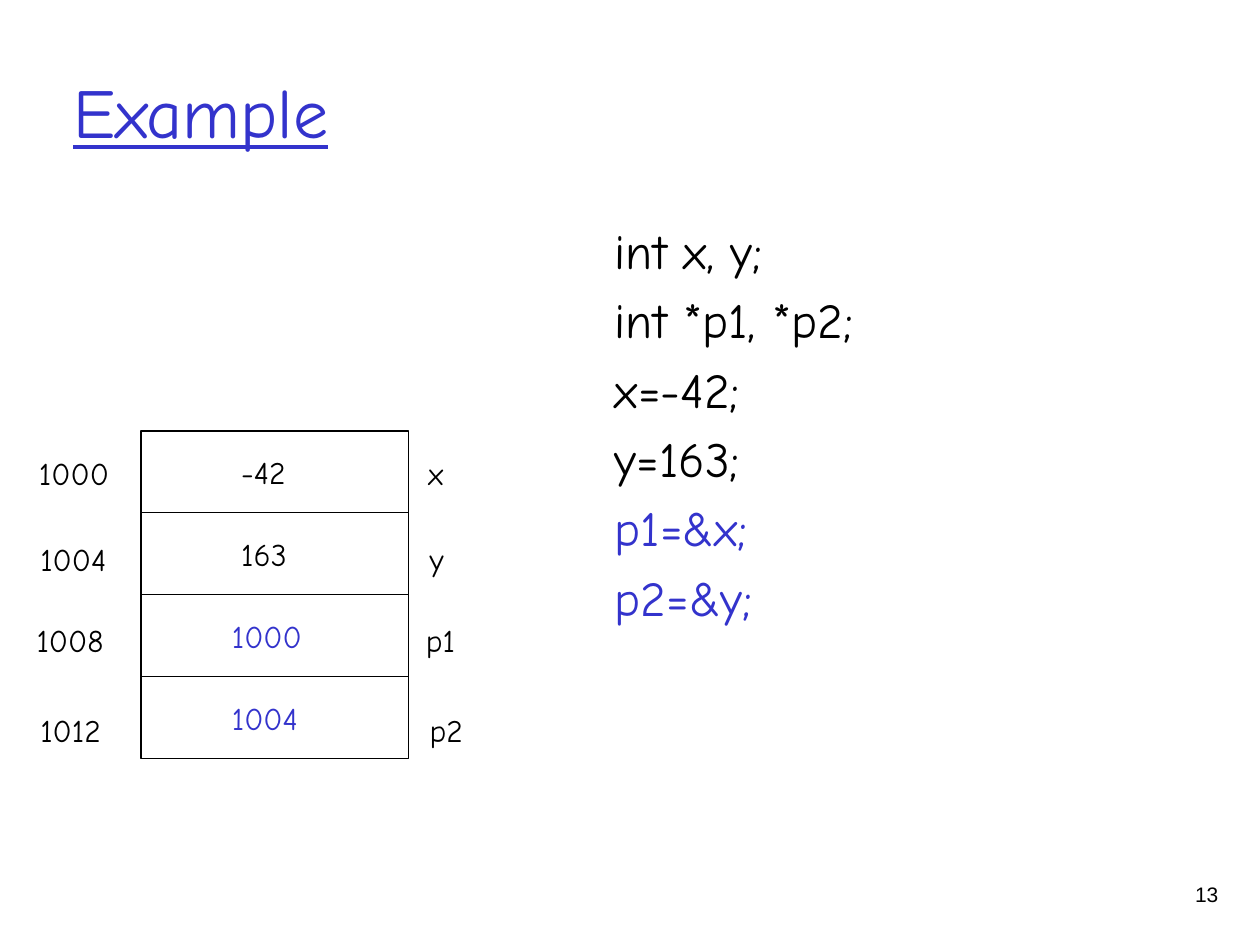
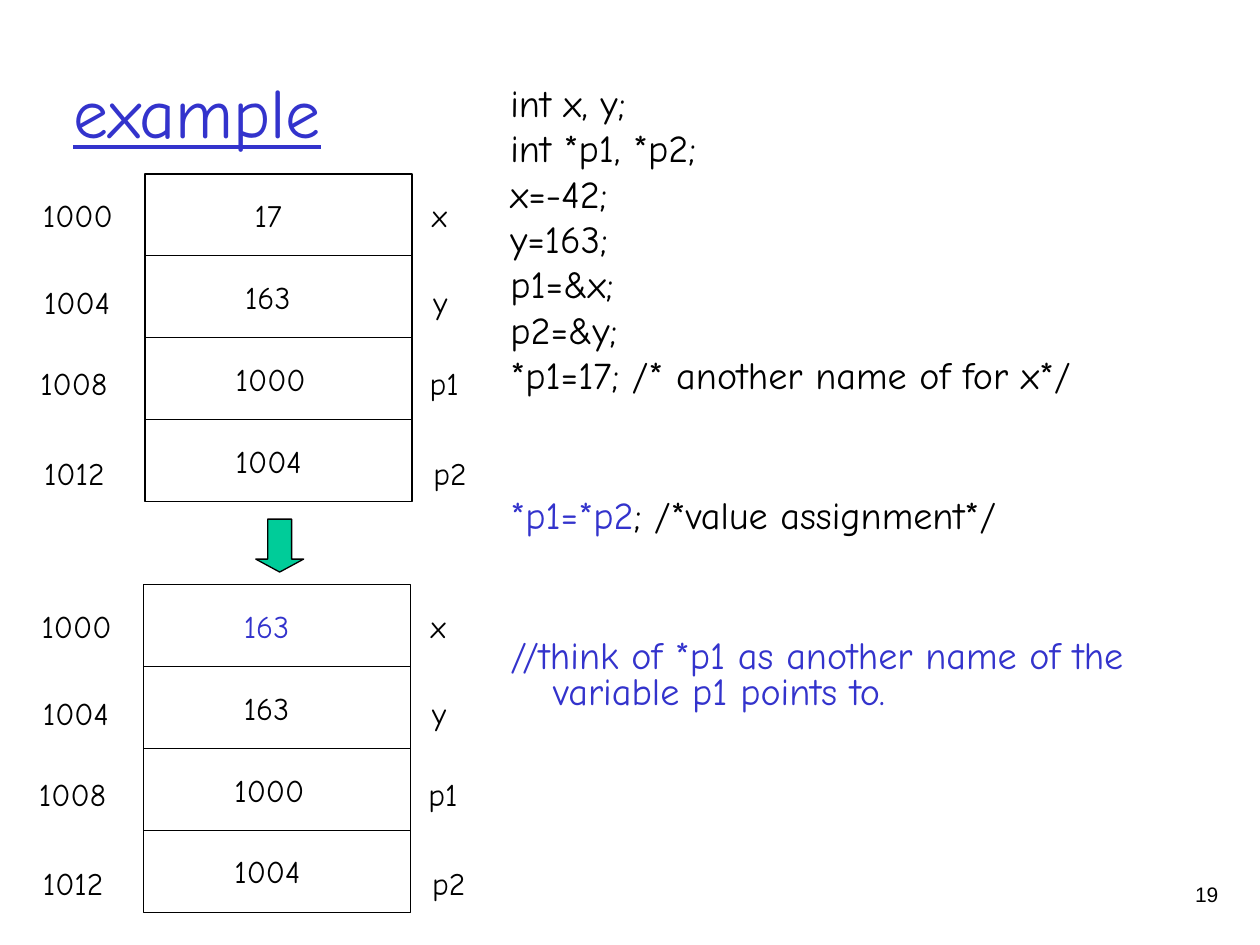
"""Two slides on C pointers: memory tables beside the code that fills them."""
from pptx import Presentation
from pptx import util as u
from pptx.dml import color
from pptx.enum import shapes, text

FONT, BLACK, BLUE, GREEN = "Comic Neue", "000000", "3333CC", "00CC99"
COLUMNS = 100
ROW_HEIGHT, TABLE_WIDTH = 6.5, 21.2
LABELS = [("1000", "x", 0, 0), ("1004", "y", 0.1, 6.9),
          ("1008", "p1", -0.2, 13.3), ("1012", "p2", 0.1, 20.4)]
DECLARATIONS = ["int x, y;", "int *p1, *p2;", "x=-42;", "y=163;"]

PAGES = [
    {"title": "Example", "number": "13", "body": (48.8, 17.5, 42, 47.3),
     "size": 28, "before": 6, "spacing": 1, "indent": 3.8,
     "code": [([(line, BLACK)], 6) for line in DECLARATIONS]
     + [([(line, BLUE)], 6) for line in ("p1=&x;", "p2=&y;")],
     "tables": [(11.2, 34.2, [("-42", BLACK), ("163", BLACK), ("1000", BLUE), ("1004", BLUE)])],
     "arrow": None},
    {"title": "example", "number": "19", "body": (40.5, 7, 56.9, 57.7),
     "size": 21.8, "spacing": 0.8, "indent": 3.4,
     "code": [([(line, BLACK)], 5) for line in DECLARATIONS
              + ["p1=&x;", "p2=&y;", "*p1=17; /* another name of for x*/"]]
     + [([("*p1=*p2", BLUE), ("; /*value assignment*/", BLACK)], 59),
        ([("//think of *p1 as another name of the variable p1 points to.", BLUE)], 59)],
     "tables": [(11.5, 13.8, [("17", BLACK), ("163", BLACK), ("1000", BLACK), ("1004", BLACK)]),
                (11.4, 46.4, [("163", BLUE), ("163", BLACK), ("1000", BLACK), ("1004", BLACK)])],
     "arrow": (20.3, 41.2, 3.8, 4.2)},
]

deck = Presentation()
deck.slide_width, deck.slide_height = u.Inches(10), u.Inches(7.5)
colour = color.RGBColor.from_string


def grid(*cells):
    """Turn counts of square grid cells into slide lengths."""
    return [round(cell * deck.slide_width / COLUMNS) for cell in cells]


def write(box, words, size, hue=BLACK, margin=0, font=FONT,
          anchor=text.MSO_ANCHOR.TOP, align=text.PP_ALIGN.LEFT):
    """Put one styled line of text into a box."""
    frame = box.text_frame
    frame.word_wrap, frame.auto_size = True, text.MSO_AUTO_SIZE.NONE
    frame.vertical_anchor = anchor
    frame.margin_left = frame.margin_right = frame.margin_top = frame.margin_bottom = grid(margin)[0]
    para = frame.paragraphs[0]
    para.text, para.alignment = words, align
    para.font.name, para.font.size = font, u.Pt(size)
    para.font.color.rgb = colour(hue)
    return para


for content in PAGES:
    page = deck.slides.add_slide(deck.slide_layouts[1])
    title, body = page.placeholders
    title.left, title.top, title.width, title.height = grid(5.8, 2.5, 85, 12.5)
    heading = write(title, content["title"], 40, BLUE, anchor=text.MSO_ANCHOR.MIDDLE)
    heading.font.underline = True
    write(page.shapes.add_textbox(*grid(89.3, 70, 7.4, 2.9)), content["number"], 12,
          font="Arial", align=text.PP_ALIGN.RIGHT)

    body.left, body.top, body.width, body.height = grid(*content["body"])
    write(body, "", content["size"])
    for index, (spans, before) in enumerate(content["code"]):
        para = body.text_frame.add_paragraph() if index else body.text_frame.paragraphs[0]
        para.font.name, para.font.size = FONT, u.Pt(content["size"])
        para.space_before, para.line_spacing = u.Pt(before), content["spacing"]
        indent = grid(content["indent"])[0]
        properties = para._p.get_or_add_pPr()
        properties.set("marL", str(indent))
        properties.set("indent", str(-indent))
        bullet = properties.makeelement(
            "{http://schemas.openxmlformats.org/drawingml/2006/main}buNone", {})
        properties.insert_element_before(bullet, "a:tabLst", "a:defRPr", "a:extLst")
        for words, hue in spans:
            span = para.add_run()
            span.text = words
            span.font.color.rgb = colour(hue)

    for left, top, values in content["tables"]:
        for row, ((value, hue), (address, name, nudge, drop)) in enumerate(zip(values, LABELS)):
            row_top = top + row * ROW_HEIGHT
            cell = page.shapes.add_shape(shapes.MSO_SHAPE.RECTANGLE,
                                         *grid(left, row_top, TABLE_WIDTH, ROW_HEIGHT))
            cell.shadow.inherit = False
            cell.fill.background()
            cell.line.color.rgb, cell.line.width = colour(BLACK), u.Pt(0.75)
            width = 0.8 + 1.5 * len(value)
            value_left = left + (TABLE_WIDTH - width) / 2
            write(page.shapes.add_textbox(*grid(value_left, row_top + 1, width, 4.5)),
                  value, 18, hue, anchor=text.MSO_ANCHOR.MIDDLE)
            for label, offset in ((address, -8.6), (name, 22.3)):
                box = page.shapes.add_textbox(
                    *grid(left + offset + nudge, top + 1.3 + drop, 7.7, 4.5))
                write(box, label, 18, margin=0.5)

    if content["arrow"]:
        arrow = page.shapes.add_shape(shapes.MSO_SHAPE.DOWN_ARROW, *grid(*content["arrow"]))
        arrow.adjustments[0], arrow.adjustments[1] = 0.5, 0.27
        arrow.shadow.inherit = False
        arrow.fill.solid()
        arrow.fill.fore_color.rgb = colour(GREEN)
        arrow.line.color.rgb, arrow.line.width = colour(BLACK), u.Pt(0.75)

deck.save("out.pptx")
